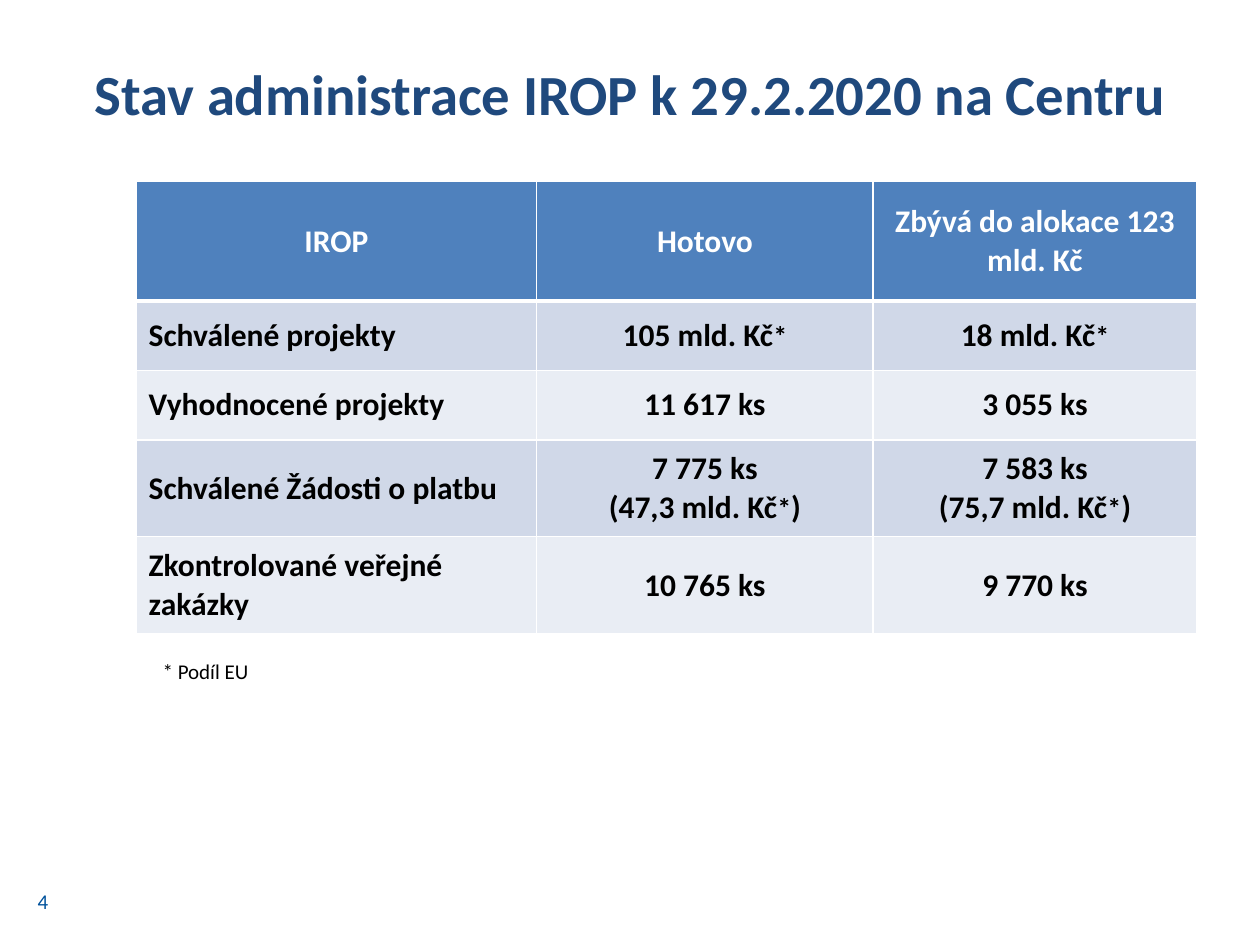
from lxml import etree
from pptx import Presentation
from pptx.dml.color import RGBColor
from pptx.enum.text import MSO_ANCHOR, MSO_AUTO_SIZE, PP_ALIGN
from pptx.oxml.ns import qn
from pptx.util import Inches, Pt

LEFT, CENTER, RIGHT = PP_ALIGN.LEFT, PP_ALIGN.CENTER, PP_ALIGN.RIGHT
TOP, MIDDLE = MSO_ANCHOR.TOP, MSO_ANCHOR.MIDDLE
FIT_SHAPE, NO_FIT = MSO_AUTO_SIZE.SHAPE_TO_FIT_TEXT, MSO_AUTO_SIZE.NONE
TITLE_ONLY = 5
FONT = "Calibri"
COLORS = {
    "title": "1F497D",
    "number": "00529C",
    "text": "000000",
    "white": "FFFFFF",
    "header": "4F81BD",
    "odd": "D0D8E8",
    "even": "E9EDF4",
}
COLUMN_WIDTHS = [3.18, 2.67, 2.57]
ROW_HEIGHTS = [0.95, 0.55, 0.55, 0.77, 0.77]
STATUS_ROWS = [
    ["IROP", "Hotovo", "Zbývá do alokace 123 mld. Kč"],
    ["Schválené projekty", "105 mld. Kč*", "18 mld. Kč*"],
    ["Vyhodnocené projekty", "11 617 ks", "3 055 ks"],
    ["Schválené Žádosti o platbu", "7 775 ks\n(47,3 mld. Kč*)", "7 583 ks\n(75,7 mld. Kč*)"],
    ["Zkontrolované veřejné zakázky", "10 765 ks", "9 770 ks"],
]


def write_text(frame, text, size=18, color="text", bold=False, align=LEFT, star_size=None):
    """Fill a text frame line by line, with asterisks in their own size."""
    for index, line in enumerate(text.split("\n")):
        para = frame.add_paragraph() if index else frame.paragraphs[0]
        para.alignment = align
        for part in line.partition("*") if star_size else [line]:
            if part:
                span = para.add_run()
                span.text = part
                span.font.name = FONT
                span.font.size = Pt(star_size if part == "*" else size)
                span.font.bold = bold
                span.font.color.rgb = RGBColor.from_string(COLORS[color])


def set_borders(cell, widths):
    """Draw white lines of the given point widths on the sides of a cell."""
    properties = cell._tc.get_or_add_tcPr()
    for index, (side, width) in enumerate(widths.items()):
        line = etree.Element(qn(f"a:ln{side}"), w=str(Pt(width)))
        fill = etree.SubElement(line, qn("a:solidFill"))
        etree.SubElement(fill, qn("a:srgbClr"), val=COLORS["white"])
        properties.insert(index, line)


def add_title(page, box, text):
    """Place and format the title placeholder."""
    title = page.shapes.title
    title.left, title.top, title.width, title.height = map(Inches, box)
    title.text_frame.vertical_anchor = MIDDLE
    title.text_frame.auto_size = NO_FIT
    write_text(title.text_frame, text, size=32.4, color="title", bold=True, align=CENTER)


def add_label(page, box, text, anchor=TOP, fit=NO_FIT, **text_format):
    """Add a small text box."""
    frame = page.shapes.add_textbox(*map(Inches, box)).text_frame
    frame.word_wrap = True
    frame.auto_size = fit
    frame.vertical_anchor = anchor
    write_text(frame, text, size=12, **text_format)


def add_status_table(page, left, top):
    """Add the status table with a header row and banded body rows."""
    box = left, top, sum(COLUMN_WIDTHS), sum(ROW_HEIGHTS)
    table = page.shapes.add_table(
        len(ROW_HEIGHTS), len(COLUMN_WIDTHS), *map(Inches, box)
    ).table
    for column, width in zip(table.columns, COLUMN_WIDTHS):
        column.width = Inches(width)
    for row_index, (row, height) in enumerate(zip(table.rows, ROW_HEIGHTS)):
        row.height = Inches(height)
        is_header = row_index == 0
        band = "header" if is_header else "odd" if row_index % 2 else "even"
        borders = {"L": 1, "R": 1, "T": 3 if row_index == 1 else 1, "B": 3 if is_header else 1}
        for column_index, cell in enumerate(row.cells):
            cell.vertical_anchor = MIDDLE
            cell.fill.solid()
            cell.fill.fore_color.rgb = RGBColor.from_string(COLORS[band])
            set_borders(cell, borders)
            write_text(
                cell.text_frame,
                STATUS_ROWS[row_index][column_index],
                color="white" if is_header else "text",
                bold=True,
                align=CENTER if is_header or column_index else LEFT,
                star_size=16,
            )


def main():
    """Build the one-slide deck."""
    deck = Presentation()
    deck.slide_width, deck.slide_height = Inches(10), Inches(7.5)
    page = deck.slides.add_slide(deck.slide_layouts[TITLE_ONLY])
    add_title(page, (0.5, 0.29, 9, 0.9), "Stav administrace IROP k 29.2.2020 na Centru")
    add_status_table(page, 1.08, 1.44)
    add_label(page, (1.08, 5.18, 0.99, 0.3), "* Podíl EU", fit=FIT_SHAPE, align=RIGHT)
    add_label(page, (0.2, 6.95, 0.55, 0.4), "4", anchor=MIDDLE, color="number")
    deck.save("out.pptx")


if __name__ == "__main__":
    main()
